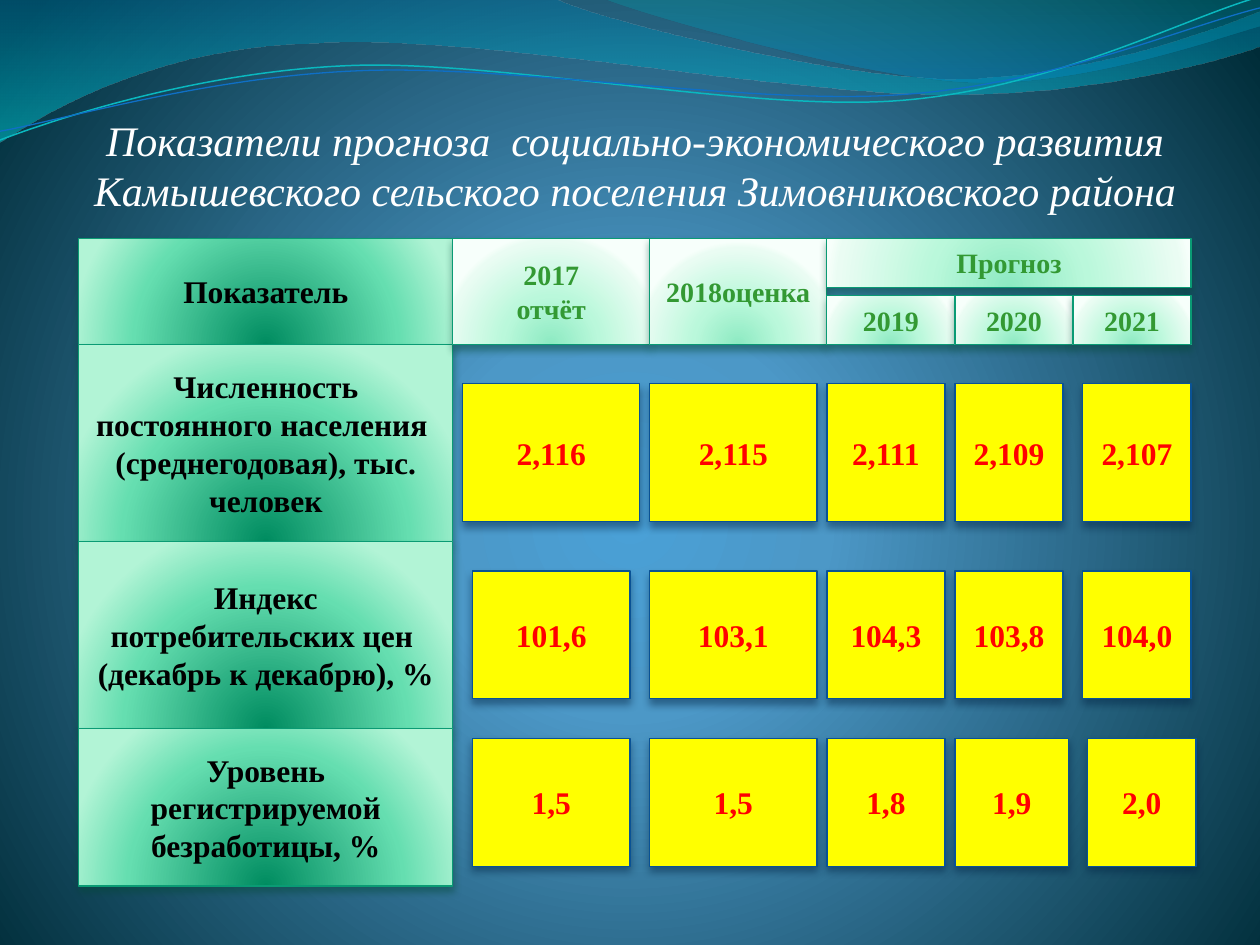
from typing import NamedTuple, Optional

from lxml.etree import SubElement
from pptx import Presentation
from pptx.dml.color import RGBColor
from pptx.enum.shapes import MSO_SHAPE
from pptx.enum.text import MSO_ANCHOR, MSO_AUTO_SIZE, PP_ALIGN
from pptx.oxml import parse_xml
from pptx.oxml.ns import nsdecls, qn
from pptx.util import Pt

FONT = "Times New Roman"
WHITE = RGBColor(0xFF, 0xFF, 0xFF)
BLACK = RGBColor(0x00, 0x00, 0x00)
RED = RGBColor(0xFF, 0x00, 0x00)
YELLOW = RGBColor(0xFF, 0xFF, 0x00)
GREEN_TEXT = RGBColor(0x33, 0x99, 0x33)
GREEN_LINE = RGBColor(0x0A, 0x9B, 0x74)
GREEN_SHADOW = RGBColor(0x04, 0x4A, 0x37)
BLUE_LINE = RGBColor(0x09, 0x52, 0x95)
BLUE_SHADOW = RGBColor(0x04, 0x27, 0x47)
AQUA = RGBColor(0x0A, 0xB8, 0xBF)
BLUE = RGBColor(0x0F, 0x6F, 0xC6)


class Stop(NamedTuple):
    position: int
    color: RGBColor
    opacity: int = 100


class Gradient(NamedTuple):
    stops: list[Stop]
    focus: Optional[tuple[int, int, int, int]] = None  # left, top, right, bottom; None = downwards


class Style(NamedTuple):
    line: RGBColor
    shadow: RGBColor
    text: RGBColor
    size: int
    gradient: Optional[Gradient] = None  # None = plain yellow


class Box(NamedTuple):
    left: float
    top: float
    width: float
    height: float
    text: str


class Wave(NamedTuple):
    start: tuple[float, float]
    segments: list[tuple[float, ...]]  # two numbers: line, six: cubic curve
    gradient: Optional[Gradient] = None
    line: Optional[RGBColor] = None
    weight: float = 0


FOCUS = (50, 130, 50, -30)
BACKGROUND = Gradient([Stop(0, RGBColor(0x4A, 0xA0, 0xD6)), Stop(25, RGBColor(0x4C, 0x98, 0xC7)),
                       Stop(100, RGBColor(0x00, 0x2C, 0x38))], (10, 110, 10, 100))
DARK_GREEN = Gradient([Stop(0, RGBColor(0x00, 0x8C, 0x60)), Stop(68, RGBColor(0x65, 0xDE, 0xB0)),
                       Stop(100, RGBColor(0xB2, 0xF4, 0xD6))], FOCUS)
PALE_GREEN = Gradient([Stop(0, RGBColor(0x8D, 0xEA, 0xC2)), Stop(43, RGBColor(0xBA, 0xF8, 0xDB)),
                       Stop(93, RGBColor(0xEA, 0xFC, 0xF3)), Stop(100, RGBColor(0xF7, 0xFF, 0xFB))], FOCUS)
LEFT_WAVE = Gradient([Stop(0, RGBColor(0x00, 0x74, 0xA1), 45), Stop(100, RGBColor(0x00, 0xC6, 0xCF), 55)])
RIGHT_WAVE = Gradient([Stop(0, RGBColor(0x00, 0xA1, 0xA9), 30), Stop(80, RGBColor(0x00, 0x8B, 0xBF), 45)])

LABEL = Style(GREEN_LINE, GREEN_SHADOW, BLACK, 18, DARK_GREEN)
HEADER = Style(GREEN_LINE, GREEN_SHADOW, GREEN_TEXT, 16, PALE_GREEN)
VALUE = Style(BLUE_LINE, BLUE_SHADOW, RED, 18)

# Wave coordinates in points
WAVES = [
    Wave((0, 0), [(317, -0.7), (343, 12, 478, 45, 546, 45), (614, 45, 690, 19, 720, 6.5), (720.7, 26),
                  (708, 32, 626, 55, 537, 54), (448, 54, 275, 20, 185, 24.5),
                  (93, 26, 33, 60, -0.7, 81.4), (0, 0)], LEFT_WAVE),
    Wave((345, -0.7), [(366, 8, 491, 44.6, 554, 47), (616, 49.7, 692, 23, 720, 15), (720, 0),
                       (345, -0.7)], RIGHT_WAVE),
    Wave((0, 80), [(34.5, 67, 114, 41, 199.5, 37.5), (284.5, 34, 427, 64, 513.5, 57.5),
                   (600, 51, 675.5, 11, 718.5, -1.5)], None, AQUA, 0.85),
    Wave((0, 75), [(34, 69, 118, 44, 204, 40.5), (290, 36.5, 430, 60.5, 516, 54),
                   (602, 48, 677.5, 15, 720, 4.5)], None, BLUE, 0.75),
]

LABEL_LEFT, LABEL_WIDTH, HEADER_TOP, HEADER_HEIGHT = 45, 213.75, 136.13, 60.75
LABELS = [
    (HEADER_HEIGHT, "Показатель"),
    (112.5, "Численность постоянного населения \n(среднегодовая), тыс. человек"),
    (106.88, "Индекс потребительских цен \n(декабрь к декабрю), %"),
    (90, "Уровень регистрируемой безработицы, %"),
]
HEADERS = [
    Box(258.75, HEADER_TOP, 112.5, HEADER_HEIGHT, "2017\nотчёт"),
    Box(371.25, HEADER_TOP, 101.25, HEADER_HEIGHT, "2018оценка"),
    Box(472.5, HEADER_TOP, 208.13, 28.13, "Прогноз"),
    Box(472.5, 168.75, 73.13, 28.13, "2019"),
    Box(545.63, 168.75, 67.5, 28.13, "2020"),
    Box(613.13, 168.75, 67.5, 28.13, "2021"),
]
# Usual left and width of each value column, with exceptions by (row, column)
COLUMNS = [(270, 90), (371.25, 95.63), (472.5, 67.5), (545.63, 61.88), (618.75, 61.88)]
EXCEPTIONS = {(0, 0): (264.38, 101.25), (2, 3): (545.63, 65), (2, 4): (621.5, 61.88)}
VALUES = [
    (219.38, 78.75, ["2,116", "2,115", "2,111", "2,109", "2,107"]),
    (326.25, 73.13, ["101,6", "103,1", "104,3", "103,8", "104,0"]),
    (421.88, 73.13, ["1,5", "1,5", "1,8", "1,9", "2,0"]),
]


def gradient_element(gradient: Gradient):
    stops = "".join(
        f'<a:gs pos="{stop.position * 1000}"><a:srgbClr val="{stop.color}">'
        f'<a:alpha val="{stop.opacity * 1000}"/></a:srgbClr></a:gs>' for stop in gradient.stops)
    direction = '<a:lin ang="5400000" scaled="1"/>'
    if gradient.focus:
        left, top, right, bottom = (side * 1000 for side in gradient.focus)
        direction = (f'<a:path path="circle"><a:fillToRect l="{left}" t="{top}" '
                     f'r="{right}" b="{bottom}"/></a:path>')
    return parse_xml(f'<a:gradFill {nsdecls("a")} rotWithShape="1"><a:gsLst>{stops}</a:gsLst>'
                     f'{direction}</a:gradFill>')


def apply_gradient(fill, properties, gradient: Gradient) -> None:
    fill.solid()
    solid = properties.find(qn("a:solidFill"))
    properties.replace(solid, gradient_element(gradient))


def add_shadow(shape, color: RGBColor) -> None:
    shape.shadow.inherit = False
    effects = shape.element.spPr.find(qn("a:effectLst"))
    outer = SubElement(effects, qn("a:outerShdw"), blurRad=str(Pt(4.5)), dist=str(Pt(3)),
                       dir="5400000", rotWithShape="0")
    shade = SubElement(outer, qn("a:srgbClr"), val=str(color))
    SubElement(shade, qn("a:alpha"), val="48000")


def add_box(slide, box: Box, style: Style) -> None:
    shape = slide.shapes.add_shape(MSO_SHAPE.RECTANGLE, Pt(box.left), Pt(box.top),
                                   Pt(box.width), Pt(box.height))
    if style.gradient:
        apply_gradient(shape.fill, shape.element.spPr, style.gradient)
    else:
        shape.fill.solid()
        shape.fill.fore_color.rgb = YELLOW
    shape.line.color.rgb = style.line
    shape.line.width = Pt(0.75)
    add_shadow(shape, style.shadow)
    frame = shape.text_frame
    frame.word_wrap = True
    frame.vertical_anchor = MSO_ANCHOR.MIDDLE
    frame.text = box.text
    for paragraph in frame.paragraphs:
        paragraph.alignment = PP_ALIGN.CENTER
        font = paragraph.font
        font.name, font.size, font.bold = FONT, Pt(style.size), True
        font.color.rgb = style.text


def bend_segments(shape, segments: list[tuple[float, ...]]) -> None:
    """Join the three straight steps of each cubic segment into one curve."""
    steps = iter(list(shape.element.iter(qn("a:lnTo"))))
    for segment in segments:
        first = next(steps)
        if len(segment) == 6:
            first.tag = qn("a:cubicBezTo")
            for step in (next(steps), next(steps)):
                first.append(step[0])
                step.getparent().remove(step)


def add_wave(slide, wave: Wave) -> None:
    # The builder rounds to whole units, so work in hundredths of a point
    points = [(segment[i] * 100, segment[i + 1] * 100)
              for segment in wave.segments for i in range(0, len(segment), 2)]
    builder = slide.shapes.build_freeform(wave.start[0] * 100, wave.start[1] * 100, scale=Pt(1) / 100)
    builder.add_line_segments(points, close=wave.gradient is not None)
    shape = builder.convert_to_shape()
    bend_segments(shape, wave.segments)
    shape.shadow.inherit = False
    if wave.gradient:
        apply_gradient(shape.fill, shape.element.spPr, wave.gradient)
        shape.line.fill.background()
    else:
        shape.fill.background()
        shape.line.color.rgb = wave.line
        shape.line.width = Pt(wave.weight)


def set_title(slide, text: str) -> None:
    title = slide.shapes.title
    title.element.getparent().append(title.element)  # in front of the waves
    title.left, title.top, title.width, title.height = Pt(45), Pt(61.6), Pt(635.63), Pt(65.5)
    frame = title.text_frame
    frame.text = text
    frame.word_wrap = True
    frame.auto_size = MSO_AUTO_SIZE.SHAPE_TO_FIT_TEXT
    frame.vertical_anchor = MSO_ANCHOR.TOP
    paragraph = frame.paragraphs[0]
    paragraph.alignment = PP_ALIGN.CENTER
    font = paragraph.font
    font.name, font.size, font.italic = FONT, Pt(24), True
    font.color.rgb = WHITE


def main() -> None:
    presentation = Presentation()
    presentation.slide_width, presentation.slide_height = Pt(720), Pt(540)
    slide = presentation.slides.add_slide(presentation.slide_layouts[5])

    # Background, waves and title
    fill = slide.background.fill
    apply_gradient(fill, slide.element.find(".//" + qn("p:bgPr")), BACKGROUND)
    for wave in WAVES:
        add_wave(slide, wave)
    set_title(slide, "Показатели прогноза  социально-экономического развития "
                     "Камышевского сельского поселения Зимовниковского района")

    # Indicator names, stacked without gaps
    top = HEADER_TOP
    for height, text in LABELS:
        add_box(slide, Box(LABEL_LEFT, top, LABEL_WIDTH, height, text), LABEL)
        top += height

    # Year headers
    for header in HEADERS:
        add_box(slide, header, HEADER)

    # Values
    for row, (top, height, texts) in enumerate(VALUES):
        for column, text in enumerate(texts):
            left, width = EXCEPTIONS.get((row, column), COLUMNS[column])
            add_box(slide, Box(left, top, width, height, text), VALUE)

    presentation.save("out.pptx")


if __name__ == "__main__":
    main()
